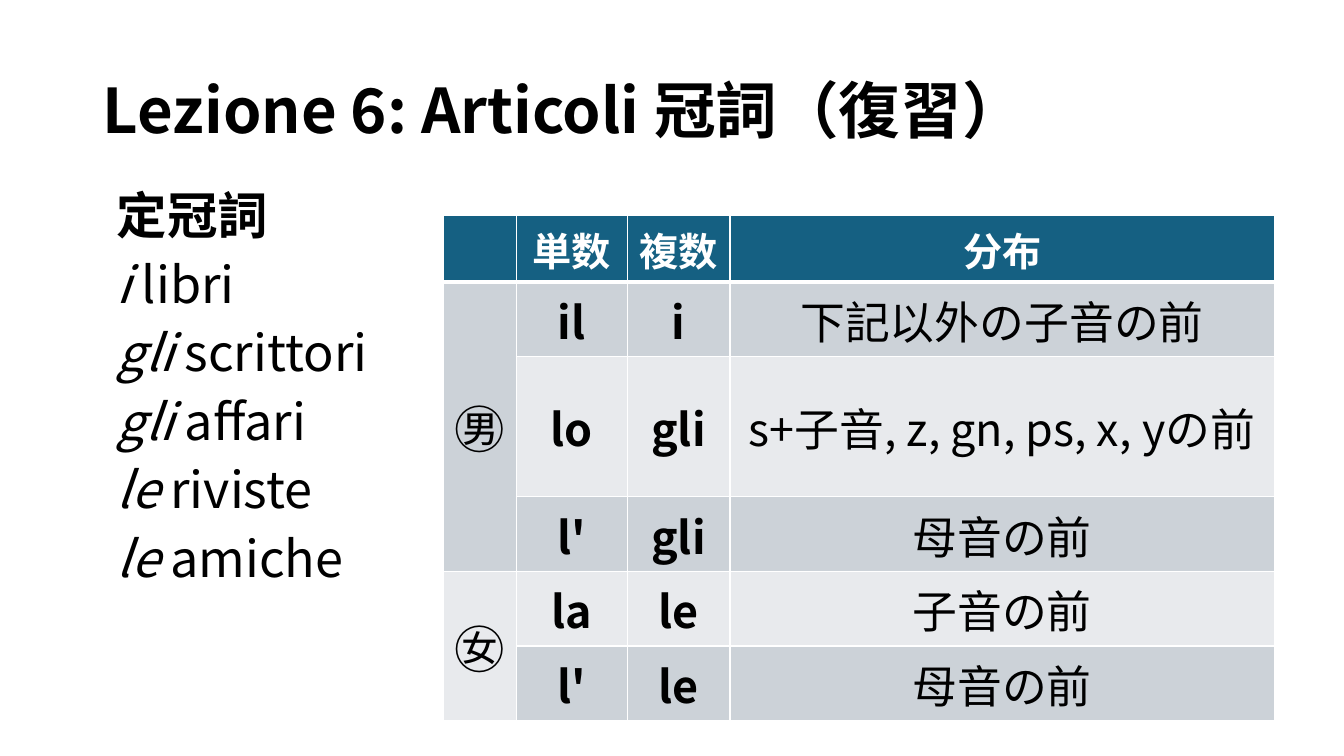
from lxml.etree import SubElement
from pptx import Presentation
from pptx.dml.color import RGBColor
from pptx.enum.text import MSO_ANCHOR as Anchor, PP_ALIGN as Align
from pptx.oxml.ns import qn
from pptx.util import Inches, Pt

FONT = "Noto Sans CJK JP"
BLACK, WHITE, TEAL = "000000", "FFFFFF", "156082"
BANDS = ["CCD2D8", "E8EAED"]

EXAMPLES = [
    ("i", " libri"),
    ("gli", " scrittori"),
    ("gli ", "affari"),
    ("le", " riviste"),
    ("le ", "amiche"),
]
ARTICLES = [
    ["", "単数", "複数", "分布"],
    ["㊚", "il", "i", "下記以外の子音の前"],
    ["", "lo", "gli", "s+子音, z, gn, ps, x, yの前"],
    ["", "l'", "gli", "母音の前"],
    ["㊛", "la", "le", "子音の前"],
    ["", "l'", "le", "母音の前"],
]
COLUMN_WIDTHS = [0.72, 1.1, 1.02, 5.4]
ROW_HEIGHTS = [0.66, 0.74, 1.39, 0.74, 0.74, 0.74]
GENDER_SPANS = [(1, 3), (4, 5)]


def color(value):
    return RGBColor.from_string(value)


class SlideBuilder:
    """Holds the style and the current slide, and adds each kind of element."""

    def __init__(self, page, font_name):
        self.page = page
        self.font_name = font_name

    def style(self, para, size, ink, bold):
        font = para.font
        font.size, font.bold, font.name = Pt(size), bold, self.font_name
        font.color.rgb = color(ink)
        defaults = para._p.pPr.find(qn("a:defRPr"))
        SubElement(defaults, qn("a:ea"), typeface=self.font_name)

    def text(self, place, lines, size, anchor=Anchor.TOP, space_before=0):
        box = self.page.shapes.add_textbox(*map(Inches, place))
        frame = box.text_frame
        frame.word_wrap = True
        frame.vertical_anchor = anchor
        for index, parts in enumerate(lines):
            para = frame.paragraphs[0] if index == 0 else frame.add_paragraph()
            para.line_spacing = 0.9
            para.space_before = Pt(space_before)
            self.style(para, size, BLACK, len(parts) == 1)
            for position, part in enumerate(parts):
                span = para.add_run()
                span.text = part
                if len(parts) == 2:
                    span.font.italic = position == 0

    def borders(self, cell, row):
        properties = cell._tc.get_or_add_tcPr()
        widths = {"L": 1, "R": 1, "T": 3 if row == 1 else 1, "B": 3 if row == 0 else 1}
        for side, width in widths.items():
            line = SubElement(properties, qn(f"a:ln{side}"), w=str(Pt(width)))
            fill = SubElement(line, qn("a:solidFill"))
            SubElement(fill, qn("a:srgbClr"), val=WHITE)

    def cell(self, cell, row, column, content, band):
        self.borders(cell, row)
        cell.fill.solid()
        cell.fill.fore_color.rgb = color(band)
        cell.vertical_anchor = Anchor.MIDDLE
        if content:
            cell.text = content
            para = cell.text_frame.paragraphs[0]
            para.alignment = Align.CENTER
            size = 28 if row == 0 else 36 if column == 0 else 32
            bold = row == 0 or column in (1, 2)
            self.style(para, size, WHITE if row == 0 else BLACK, bold)

    def table(self, left, top, rows, widths, heights, spans):
        place = map(Inches, (left, top, sum(widths), sum(heights)))
        grid = self.page.shapes.add_table(len(rows), len(widths), *place).table
        for column, width in zip(grid.columns, widths):
            column.width = Inches(width)
        for line, height in zip(grid.rows, heights):
            line.height = Inches(height)
        for row, contents in enumerate(rows):
            band = TEAL if row == 0 else BANDS[(row - 1) % 2]
            for column, content in enumerate(contents):
                self.cell(grid.cell(row, column), row, column, content, band)
        for first, last in spans:
            grid.cell(first, 0).merge(grid.cell(last, 0))


def main():
    deck = Presentation()
    deck.slide_width, deck.slide_height = Inches(13.33), Inches(7.5)
    builder = SlideBuilder(deck.slides.add_slide(deck.slide_layouts[6]), FONT)
    builder.text((0.92, 0.4, 11.5, 1.45), [("Lezione 6: Articoli 冠詞（復習）",)], 44, Anchor.MIDDLE)
    builder.text((1.06, 1.85, 12.18, 5.56), [("定冠詞",), *EXAMPLES], 36, space_before=10)
    builder.table(4.4, 2.14, ARTICLES, COLUMN_WIDTHS, ROW_HEIGHTS, GENDER_SPANS)
    deck.save("out.pptx")


if __name__ == "__main__":
    main()
